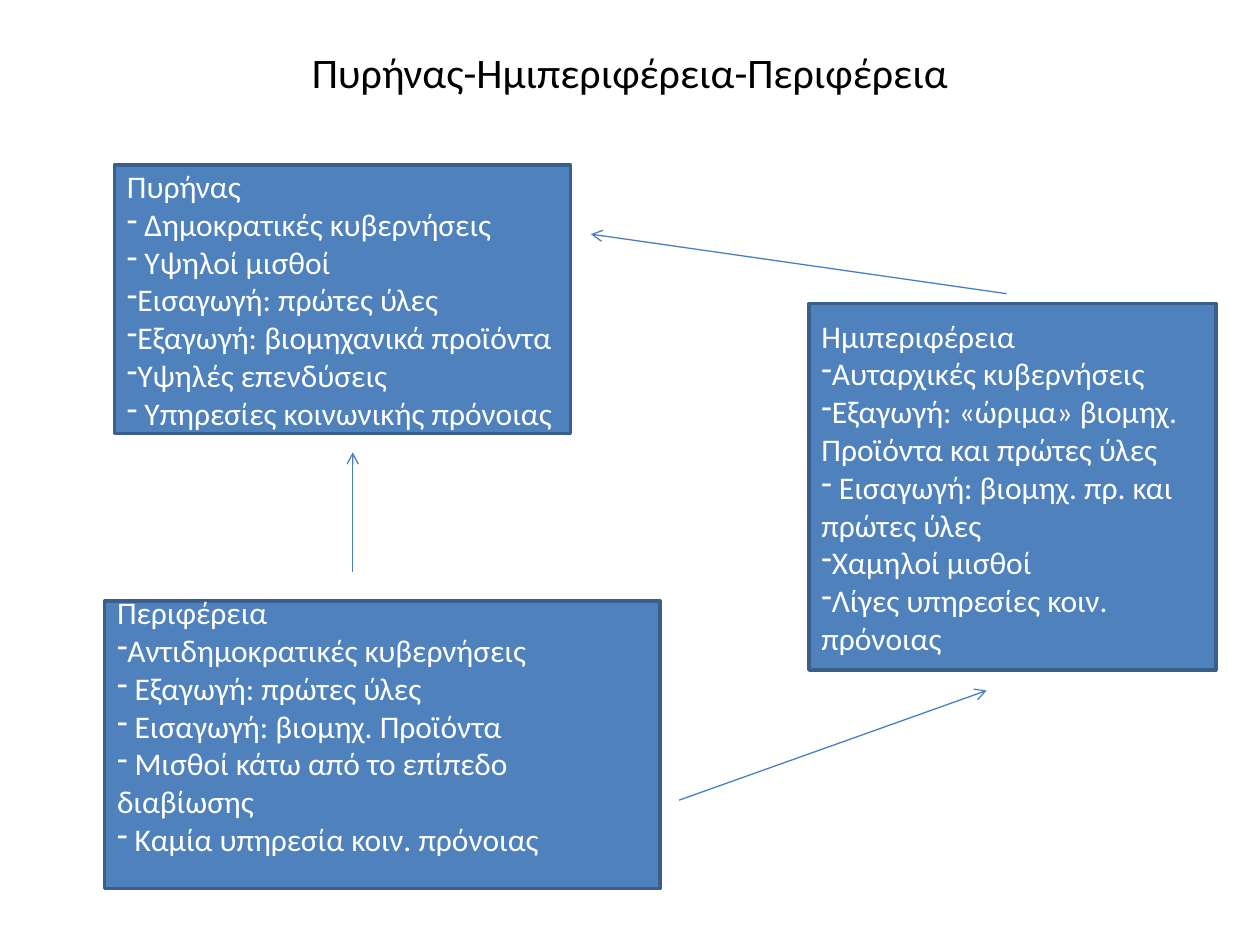
from lxml.etree import SubElement
from pptx import Presentation
from pptx.dml.color import RGBColor
from pptx.enum.shapes import MSO_CONNECTOR as Connector, MSO_SHAPE as Shape
from pptx.enum.text import MSO_ANCHOR as Anchor, PP_ALIGN as Align
from pptx.oxml.ns import qn
from pptx.util import Cm, Pt

FONT = "Calibri"
BLACK, WHITE = "000000", "FFFFFF"
BLUE, BORDER, ARROW = "4F81BD", "3A5F8C", "4B7EBC"
PADDING = 0.25

REGIONS = [
    ((2.31, 3.33, 9.19, 5.41), 0.13, "Πυρήνας", [
        " Δημοκρατικές κυβερνήσεις",
        " Υψηλοί μισθοί",
        "Εισαγωγή: πρώτες ύλες",
        "Εξαγωγή: βιομηχανικά προϊόντα",
        "Υψηλές επενδύσεις",
        " Υπηρεσίες κοινωνικής πρόνοιας",
    ]),
    ((16.31, 6.12, 8.2, 7.39), 0.13, "Ημιπεριφέρεια", [
        "Αυταρχικές κυβερνήσεις",
        "Εξαγωγή: «ώριμα» βιομηχ. Προϊόντα και πρώτες ύλες",
        " Εισαγωγή: βιομηχ. πρ. και πρώτες ύλες",
        "Χαμηλοί μισθοί",
        "Λίγες υπηρεσίες κοιν. πρόνοιας",
    ]),
    ((2.11, 12.12, 11.2, 5.79), 0.9, "Περιφέρεια", [
        "Αντιδημοκρατικές κυβερνήσεις",
        " Εξαγωγή: πρώτες ύλες",
        " Εισαγωγή: βιομηχ. Προϊόντα",
        " Μισθοί κάτω από το επίπεδο διαβίωσης",
        " Καμία υπηρεσία κοιν. πρόνοιας",
    ]),
]

ARROWS = [
    ((7.11, 11.53), (7.11, 9.12)),
    ((13.69, 16.13), (19.89, 13.92)),
    ((20.29, 5.92), (11.91, 4.72)),
]


def color(value):
    return RGBColor.from_string(value)


def write(para, text, *, size=18, fill=WHITE, align=Align.LEFT, bullet=None):
    para.alignment = align
    if bullet:
        properties = para._p.get_or_add_pPr()
        SubElement(properties, qn("a:buFontTx"))
        SubElement(properties, qn("a:buChar"), char=bullet)
    span = para.add_run()
    span.text = text
    span.font.name = FONT
    span.font.size = Pt(size)
    span.font.color.rgb = color(fill)


def add_title(page, bounds, text):
    frame = page.shapes.add_textbox(*map(Cm, bounds)).text_frame
    frame.word_wrap = True
    frame.vertical_anchor = Anchor.MIDDLE
    write(frame.paragraphs[0], text, size=24, fill=BLACK, align=Align.CENTER)


def add_region(page, bounds, bottom, heading, points):
    box = page.shapes.add_shape(Shape.RECTANGLE, *map(Cm, bounds))
    box.shadow.inherit = False
    box.fill.solid()
    box.fill.fore_color.rgb = color(BLUE)
    box.line.color.rgb = color(BORDER)
    box.line.width = Pt(2)
    frame = box.text_frame
    frame.word_wrap = True
    frame.vertical_anchor = Anchor.MIDDLE
    frame.margin_left = frame.margin_right = Cm(PADDING)
    frame.margin_bottom = Cm(bottom)
    write(frame.paragraphs[0], heading)
    for point in points:
        write(frame.add_paragraph(), point, bullet="-")


def add_arrow(page, start, end):
    arrow = page.shapes.add_connector(Connector.STRAIGHT, *map(Cm, start + end))
    arrow.line.color.rgb = color(ARROW)
    arrow.line.width = Pt(0.75)
    SubElement(arrow.line._get_or_add_ln(), qn("a:tailEnd"), type="arrow")
    SubElement(arrow._element.spPr, qn("a:effectLst"))


def main():
    deck = Presentation()
    deck.slide_width, deck.slide_height = Cm(25.4), Cm(19.05)
    page = deck.slides.add_slide(deck.slide_layouts[6])
    add_title(page, (1.27, 0.76, 22.86, 1.37), "Πυρήνας-Ημιπεριφέρεια-Περιφέρεια")
    for region in REGIONS:
        add_region(page, *region)
    for start, end in ARROWS:
        add_arrow(page, start, end)
    deck.save("out.pptx")


if __name__ == "__main__":
    main()
